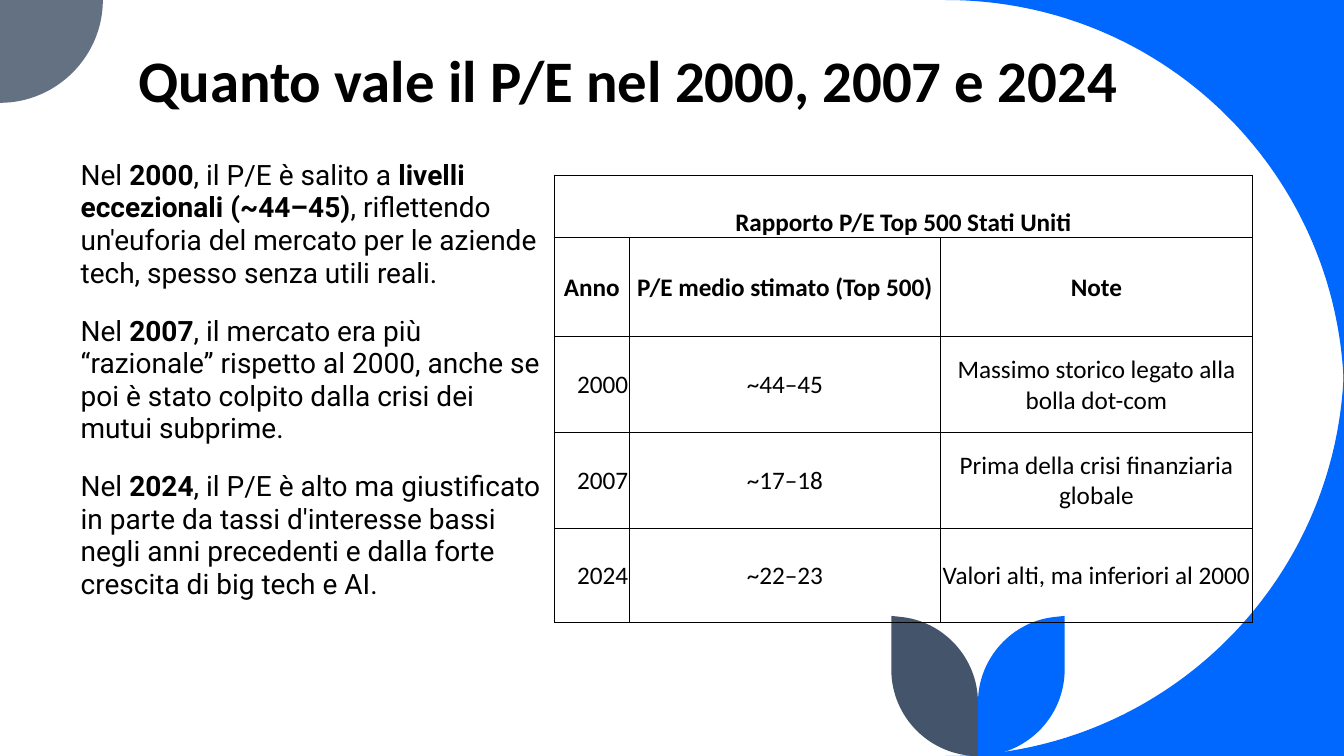
"""Build a slide on the P/E ratio in 2000, 2007 and 2024."""
from dataclasses import dataclass
from typing import Any

from lxml import etree
from pptx import Presentation
from pptx.dml.color import RGBColor
from pptx.enum.text import MSO_ANCHOR, MSO_AUTO_SIZE, PP_ALIGN
from pptx.oxml.ns import qn
from pptx.util import Inches, Pt

TOP, MIDDLE, BOTTOM = MSO_ANCHOR.TOP, MSO_ANCHOR.MIDDLE, MSO_ANCHOR.BOTTOM
LEFT, CENTER, RIGHT = PP_ALIGN.LEFT, PP_ALIGN.CENTER, PP_ALIGN.RIGHT
NO_FIT = MSO_AUTO_SIZE.NONE


@dataclass(frozen=True)
class Theme:
    """Colours, fonts and type sizes."""
    blue: str = "0068FF"
    gray: str = "637183"
    slate: str = "44546A"
    ink: str = "000000"
    head: str = "Calibri"
    text: str = "Roboto"
    title: float = 42
    body: float = 20
    cell: float = 18


@dataclass(frozen=True)
class Outline:
    """A closed outline: pairs are corners, sixes are Bezier curves."""
    steps: tuple[tuple[float, ...], ...]
    color: str


THEME = Theme()
WIDE, HIGH = 13.33, 7.5
ARC = 3.95
EDGE, AXIS = WIDE - ARC, 9.7
LEAF = ((10.56, 6.11), (10.56, 6.64), (10.56, 7.12, 10.17, 7.5, AXIS, 7.5),
        (AXIS, 6.97), (AXIS, 6.53, 10.04, 6.16, 10.47, 6.12))


def flip(steps: tuple, axis: float, across: int) -> tuple:
    """Mirror steps about an axis, across x (0) or y (1)."""
    return tuple(tuple(round(2 * axis - v, 2) if i % 2 == across else v
                       for i, v in enumerate(step)) for step in steps)


CORNER = ((WIDE, 0), (EDGE, 0), (11.57, 0, WIDE, 1.77, WIDE, ARC))
OUTLINES = (
    Outline(CORNER, THEME.blue),
    Outline(flip(CORNER, HIGH / 2, 1), THEME.blue),
    Outline(((0, 0), (1.02, 0), (1.02, 0.56, 0.56, 1.02, 0, 1.02)), THEME.gray),
    Outline(LEAF, THEME.blue),
    Outline(flip(LEAF, AXIS, 0), THEME.slate),
)

TITLE = "Quanto vale il P/E nel 2000, 2007 e 2024"
NOTES = (
    ("Nel ", "2000", ", il P/E è salito a ", "livelli eccezionali (~44–45)",
     ", riflettendo un'euforia del mercato per le aziende tech, "
     "spesso senza utili reali."),
    ("Nel ", "2007", ", il mercato era più “razionale” rispetto al 2000, "
     "anche se poi è stato colpito dalla crisi dei mutui subprime."),
    ("Nel ", "2024", ", il P/E è alto ma giustificato in parte da tassi "
     "d'interesse bassi negli anni precedenti e dalla forte crescita "
     "di big tech e AI."),
)
ROWS = (
    ("Rapporto P/E Top 500 Stati Uniti", "", ""),
    ("Anno", "P/E medio stimato (Top 500)", "Note"),
    ("2000", "~44–45", "Massimo storico legato alla bolla dot-com"),
    ("2007", "~17–18", "Prima della crisi finanziaria globale"),
    ("2024", "~22–23", "Valori alti, ma inferiori al 2000"),
)
COLS = (0.74, 3.09, 3.09)
TALL = (0.62, 0.98, 0.95, 0.95, 0.94)


def apply(item: Any, values: dict[str, Any]) -> None:
    """Set every attribute named in values."""
    for name, value in values.items():
        setattr(item, name, value)


def place(item: Any, *box: float) -> None:
    """Move and size a shape, in inches."""
    names = ("left", "top", "width", "height")
    apply(item, dict(zip(names, map(Inches, box))))


def write(para: Any, text: str, font: str, size: float, bold: bool) -> None:
    """Add one formatted run."""
    run = para.add_run()
    run.text = text
    apply(run.font, {"name": font, "size": Pt(size), "bold": bold})
    run.font.color.rgb = RGBColor.from_string(THEME.ink)


def bend(shape: Any, steps: tuple) -> None:
    """Turn the straight sides that stand for curves into Beziers."""
    sides = list(shape._element.iter(qn("a:lnTo")))
    for side, step in zip(sides, steps[1:]):
        if len(step) == 6:
            curve = etree.Element(qn("a:cubicBezTo"))
            for x, y in zip(step[::2], step[1::2]):
                etree.SubElement(curve, qn("a:pt"),
                                 x=str(Inches(x) - shape.left),
                                 y=str(Inches(y) - shape.top))
            side.getparent().replace(side, curve)


def draw(slide: Any, outline: Outline) -> None:
    """Draw one filled outline."""
    ends = [(Inches(step[-2]), Inches(step[-1])) for step in outline.steps]
    pen = slide.shapes.build_freeform(*ends[0])
    pen.add_line_segments(ends[1:], close=True)
    shape = pen.convert_to_shape()
    bend(shape, outline.steps)
    shape.shadow.inherit = False
    shape.fill.solid()
    shape.fill.fore_color.rgb = RGBColor.from_string(outline.color)
    shape.line.fill.background()


def add_title(slide: Any) -> None:
    """Fill the title placeholder."""
    title = slide.shapes.title
    place(title, 1.27, 0.27, 10.5, 0.91)
    apply(title.text_frame, {"vertical_anchor": BOTTOM, "word_wrap": True,
                             "auto_size": NO_FIT})
    para = title.text_frame.paragraphs[0]
    apply(para, {"alignment": LEFT, "line_spacing": 0.8})
    write(para, TITLE, THEME.head, THEME.title, True)


def add_body(slide: Any) -> None:
    """Fill the body placeholder; every second run is bold."""
    body = slide.placeholders[1]
    place(body, 0.7, 1.53, 4.8, 4.85)
    frame = body.text_frame
    apply(frame, {"vertical_anchor": TOP, "word_wrap": True,
                  "auto_size": NO_FIT})
    for i, note in enumerate(NOTES):
        para = frame.add_paragraph() if i else frame.paragraphs[0]
        apply(para, {"alignment": LEFT, "line_spacing": 0.97,
                     "space_before": Pt(10), "space_after": Pt(8)})
        props = para._p.get_or_add_pPr()
        props.set("marL", "0")
        props.set("indent", "0")
        etree.SubElement(props, qn("a:buNone"))
        for j, part in enumerate(note):
            write(para, part, THEME.text, THEME.body, j % 2 == 1)


def frame_cell(cell: Any) -> None:
    """Give a cell thin borders and no fill."""
    props = cell._tc.get_or_add_tcPr()
    for side in ("a:lnL", "a:lnR", "a:lnT", "a:lnB"):
        line = etree.SubElement(props, qn(side), w=str(Pt(1)))
        fill = etree.SubElement(line, qn("a:solidFill"))
        etree.SubElement(fill, qn("a:srgbClr"), val=THEME.ink)
    cell.fill.background()


def add_grid(slide: Any) -> None:
    """Add the table of ratios."""
    box = map(Inches, (5.5, 1.74, sum(COLS), sum(TALL)))
    grid = slide.shapes.add_table(len(ROWS), len(COLS), *box).table
    apply(grid, {"first_row": False, "horz_banding": False})
    for col, width in zip(grid.columns, COLS):
        col.width = Inches(width)
    for row, height in zip(grid.rows, TALL):
        row.height = Inches(height)
    grid.cell(0, 0).merge(grid.cell(0, len(COLS) - 1))
    pad = Inches(0.01)
    for i, row in enumerate(ROWS):
        for j, text in enumerate(row):
            cell = grid.cell(i, j)
            apply(cell, {"margin_left": pad, "margin_right": pad,
                         "margin_top": pad, "margin_bottom": 0,
                         "vertical_anchor": MIDDLE if i else BOTTOM})
            frame_cell(cell)
            if text:
                para = cell.text_frame.paragraphs[0]
                para.alignment = RIGHT if i > 1 and j == 0 else CENTER
                write(para, text, THEME.head, THEME.cell, i < 2)


def main() -> None:
    """Build and save the slide."""
    deck = Presentation()
    apply(deck, {"slide_width": Inches(WIDE), "slide_height": Inches(HIGH)})
    slide = deck.slides.add_slide(deck.slide_layouts[1])
    holders = list(slide.placeholders)
    for outline in OUTLINES:
        draw(slide, outline)
    for holder in holders:
        slide.shapes._spTree.append(holder._element)
    add_title(slide)
    add_body(slide)
    add_grid(slide)
    deck.save("out.pptx")


if __name__ == "__main__":
    main()
